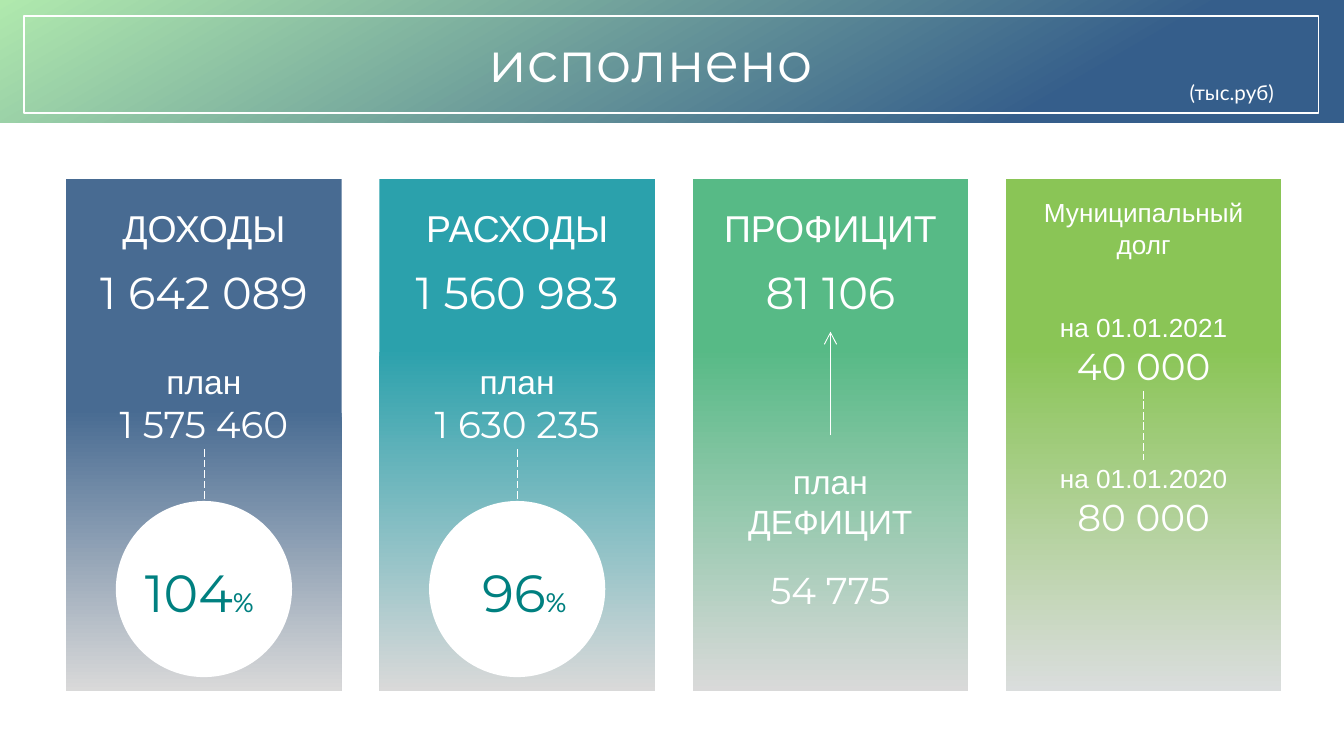
from lxml import etree
from pptx import Presentation
from pptx.dml.color import RGBColor
from pptx.enum.dml import MSO_LINE
from pptx.enum.shapes import MSO_CONNECTOR, MSO_SHAPE
from pptx.enum.text import MSO_ANCHOR, MSO_AUTO_SIZE, PP_ALIGN
from pptx.oxml.ns import qn
from pptx.util import Cm, Pt

RECTANGLE, OVAL = MSO_SHAPE.RECTANGLE, MSO_SHAPE.OVAL
STRAIGHT = MSO_CONNECTOR.STRAIGHT
DASH = MSO_LINE.LONG_DASH
CENTER, LEFT = PP_ALIGN.CENTER, PP_ALIGN.LEFT
TOP_ANCHOR, MIDDLE = MSO_ANCHOR.TOP, MSO_ANCHOR.MIDDLE
FIT_SHAPE, FIXED = MSO_AUTO_SIZE.SHAPE_TO_FIT_TEXT, MSO_AUTO_SIZE.NONE
TOP_SITE, BOTTOM_SITE = 0, 2

WHITE, TEAL = "FFFFFF", "008080"
ARIAL, LATO, MONTSERRAT = "Arial", "Lato", "Montserrat"

# Each block: top, height, width (cm), paragraphs; each paragraph: text, size, font, space before
COLUMNS = [
    {"stops": [(0.45, "486B92"), (1, "D9D9D9")],
     "blocks": [
         (3.84, 0.94, 3.3, [("ДОХОДЫ", 20, ARIAL, 0)]),
         (4.95, 1.12, 4.75, [("1 642 089", 24, MONTSERRAT, 0)]),
         (6.76, 1.73, 4, [("план", 18, ARIAL, 0), ("1 575 460", 20, MONTSERRAT, 0)])],
     "percent": ("104", LEFT, 1.24)},
    {"stops": [(0.33, "2BA1AC"), (1, "D9D9D9")],
     "blocks": [
         (3.84, 0.94, 3.66, [("РАСХОДЫ", 20, ARIAL, 0)]),
         (4.95, 1.12, 4.75, [("1 560 983", 24, MONTSERRAT, 0)]),
         (6.76, 1.73, 4, [("план", 18, ARIAL, 0), ("1 630 235", 20, MONTSERRAT, 0)])],
     "percent": ("96", CENTER, 1.14)},
    {"stops": [(0.33, "57BA86"), (1, "D9D9D9")],
     "blocks": [
         (3.84, 0.94, 4.24, [("ПРОФИЦИТ", 20, ARIAL, 0)]),
         (4.95, 1.12, 3.33, [("81 106", 24, MONTSERRAT, 0)]),
         (8.64, 3, 3.33, [("план", 18, ARIAL, 0), ("ДЕФИЦИТ", 18, ARIAL, 0),
                          ("54 775", 20, MONTSERRAT, 14)])],
     "arrow": (8.23, 6.27)},
    {"stops": [(0.33, "8AC556"), (1, "DADDDD")],
     "blocks": [
         (3.66, 1.3, 4.95, [("Муниципальный долг", 14, ARIAL, 0)]),
         (5.84, 1.55, 3.38, [("на 01.01.2021", 14, ARIAL, 0), ("40 000", 20, MONTSERRAT, 0)]),
         (8.69, 1.55, 3.38, [("на 01.01.2020", 14, ARIAL, 0), ("80 000", 20, MONTSERRAT, 0)])],
     "joined": (1, 2)},
]
COLUMN_LEFT, COLUMN_TOP, COLUMN_WIDTH, COLUMN_HEIGHT, COLUMN_STEP = 1.25, 3.38, 5.21, 9.68, 5.92
CIRCLE_TOP, CIRCLE_SIZE = 9.47, 3.33
PERCENT_TOP, PERCENT_WIDTH, PERCENT_HEIGHT = 10.46, 3.2, 0.94

TIGHT_FRAME = {"margin_left": Cm(0.1), "margin_right": Cm(0.1), "margin_top": Cm(0.05),
               "margin_bottom": Cm(0.05), "auto_size": FIT_SHAPE}
PERCENT_FRAME = {"auto_size": FIXED, "word_wrap": True, "vertical_anchor": TOP_ANCHOR}


def rgb(color):
    return RGBColor.from_string(color)


def set_all(target, values):
    for name, value in values.items():
        setattr(target, name, value)


def add_shape(slide, kind, *box):
    """Add an unfilled, unlined, shadowless shape; box is left, top, width, height in cm."""
    shape = slide.shapes.add_shape(kind, *map(Cm, box))
    shape.shadow.inherit = False
    shape.fill.background()
    shape.line.fill.background()
    return shape


def fill_gradient(shape, stops, clockwise_angle):
    shape.fill.gradient()
    shape.fill.gradient_angle = 360 - clockwise_angle
    for stop, (position, color) in zip(shape.fill.gradient_stops, stops):
        stop.position = position
        stop.color.rgb = rgb(color)


def add_run(paragraph, text, size, font, color):
    run = paragraph.add_run()
    run.text = text
    set_all(run.font, {"size": Pt(size), "name": font})
    run.font.color.rgb = rgb(color)


def add_text(slide, box, lines, wrap=False, anchor=MIDDLE):
    text_box = slide.shapes.add_textbox(*map(Cm, box))
    frame = text_box.text_frame
    set_all(frame, {**TIGHT_FRAME, "word_wrap": wrap, "vertical_anchor": anchor})
    for index, (text, size, font, space_before) in enumerate(lines):
        paragraph = frame.add_paragraph() if index else frame.paragraphs[0]
        paragraph.alignment = CENTER
        if space_before:
            paragraph.space_before = Pt(space_before)
        add_run(paragraph, text, size, font, WHITE)
    return text_box


def add_line(slide, x=0, start=0, end=0):
    line = slide.shapes.add_connector(STRAIGHT, Cm(x), Cm(start), Cm(x), Cm(end))
    line.line.color.rgb = rgb(WHITE)
    line.line.width = Pt(0.5)
    etree.SubElement(line.line._get_or_add_ln().getparent(), qn("a:effectLst"))
    return line


def join(slide, upper, lower):
    line = add_line(slide)
    line.begin_connect(upper, BOTTOM_SITE)
    line.end_connect(lower, TOP_SITE)
    line.line.dash_style = DASH


def add_arrow(slide, x, start, end):
    line = add_line(slide, x, start, end)
    etree.SubElement(line.line._get_or_add_ln(), qn("a:tailEnd"), type="arrow")


def add_percent(slide, left, center, number, alignment, offset):
    circle = add_shape(slide, OVAL, center - CIRCLE_SIZE / 2, CIRCLE_TOP, CIRCLE_SIZE, CIRCLE_SIZE)
    circle.fill.solid()
    circle.fill.fore_color.rgb = rgb(WHITE)
    box = (left + offset, PERCENT_TOP, PERCENT_WIDTH, PERCENT_HEIGHT)
    frame = slide.shapes.add_textbox(*map(Cm, box)).text_frame
    set_all(frame, PERCENT_FRAME)
    paragraph = frame.paragraphs[0]
    paragraph.alignment = alignment
    add_run(paragraph, number, 28, MONTSERRAT, TEAL)
    add_run(paragraph, "%", 14, LATO, TEAL)
    return circle


def add_header(slide):
    banner = add_shape(slide, RECTANGLE, 0, 0, 25.4, 2.32)
    fill_gradient(banner, [(0, "B0E9AD"), (0.79, "355E8B")], 60)
    add_text(slide, (8.89, 0.46, 6.81, 1.37), [("исполнено", 30, MONTSERRAT, 0)])
    border = add_shape(slide, RECTANGLE, 0.46, 0.3, 24.46, 1.83)
    border.line.color.rgb = rgb(WHITE)
    border.line.width = Pt(1)
    add_text(slide, (21.77, 1.47, 3.02, 0.56), [("(тыс.руб)", 11, LATO, 0)],
             wrap=True, anchor=TOP_ANCHOR)


def add_column(slide, left, column):
    center = left + COLUMN_WIDTH / 2
    panel = add_shape(slide, RECTANGLE, left, COLUMN_TOP, COLUMN_WIDTH, COLUMN_HEIGHT)
    fill_gradient(panel, column["stops"], 90)
    blocks = [add_text(slide, (center - width / 2, top, width, height), lines,
                       wrap=width > COLUMN_WIDTH - 0.3)
              for top, height, width, lines in column["blocks"]]
    if "percent" in column:
        join(slide, blocks[-1], add_percent(slide, left, center, *column["percent"]))
    if "joined" in column:
        upper, lower = column["joined"]
        join(slide, blocks[upper], blocks[lower])
    if "arrow" in column:
        add_arrow(slide, center, *column["arrow"])


def main():
    presentation = Presentation()
    presentation.slide_width, presentation.slide_height = Cm(25.4), Cm(14.29)
    slide = presentation.slides.add_slide(presentation.slide_layouts[6])
    add_header(slide)
    for index, column in enumerate(COLUMNS):
        add_column(slide, COLUMN_LEFT + index * COLUMN_STEP, column)
    presentation.save("out.pptx")


if __name__ == "__main__":
    main()
